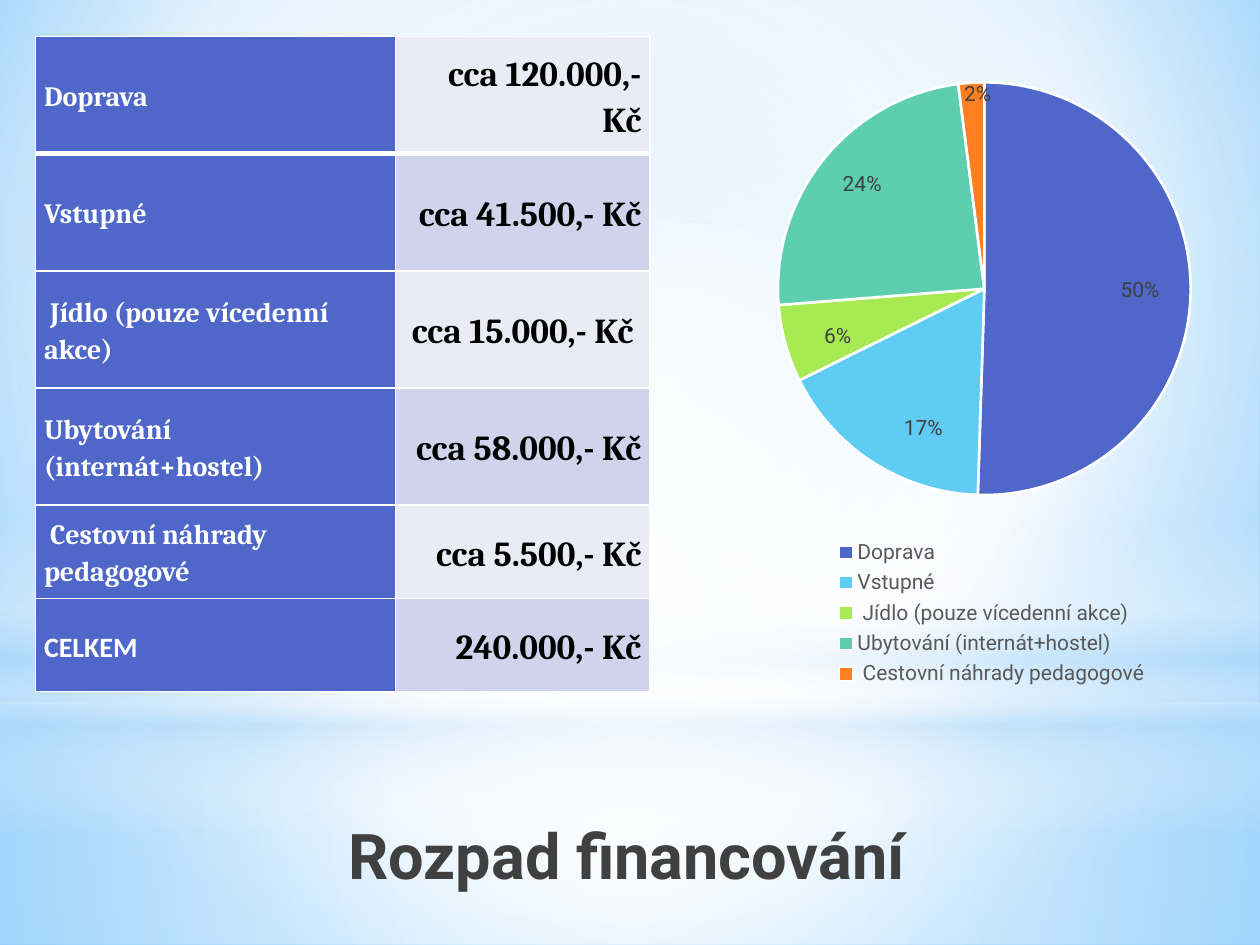
"""Build a slide with a table of trip costs, a pie chart of their shares and a title."""
from lxml import etree
from pptx import Presentation
from pptx.chart.data import CategoryChartData
from pptx.dml.color import RGBColor
from pptx.enum.chart import XL_CHART_TYPE as ChartType, XL_LABEL_POSITION as LabelPosition
from pptx.enum.chart import XL_LEGEND_POSITION as LegendPosition
from pptx.enum.shapes import MSO_SHAPE as Shape
from pptx.enum.text import MSO_ANCHOR as Anchor, PP_ALIGN as Align
from pptx.oxml import parse_xml
from pptx.oxml.ns import nsdecls, qn
from pptx.util import Inches, Pt

WHITE, PALE_BLUE, INDIGO, DARK_GRAY = "FFFFFF", "B4DCFA", "4E67C8", "404040"


def rgb(color):
    return RGBColor.from_string(color)


def write_text(frame, text, font="Cambria", size=16, color=WHITE, align=Align.LEFT, spacing=1.0):
    paragraph = frame.paragraphs[0]
    paragraph.alignment = align
    paragraph.line_spacing = spacing
    run = paragraph.add_run()
    run.text = text
    run.font.name = font
    run.font.size = Pt(size)
    run.font.bold = True
    run.font.color.rgb = rgb(color)


presentation = Presentation()
presentation.slide_width, presentation.slide_height = Inches(10), Inches(7.5)
slide = presentation.slides.add_slide(presentation.slide_layouts[5])

background_stops = [(0, "9ED5FF", 100), (60, WHITE, 100), (100, "5BB9FF", 100)]
floor_stops = [(0, WHITE, 91), (37, WHITE, 76), (100, PALE_BLUE, 79)]
wall_stops = [(0, WHITE, 89), (48, WHITE, 62), (100, PALE_BLUE, 79)]
horizon_stops = [(0, WHITE, 0), (29, WHITE, 30), (45, PALE_BLUE, 40),
                 (55, WHITE, 26), (65, PALE_BLUE, 60), (100, WHITE, 0)]
halo_stops = [(0, WHITE, 100), (56, WHITE, 0)]

radial = '<a:path path="circle"><a:fillToRect l="{}" t="{}" r="{}" b="{}"/></a:path>'
centered = radial.format(50000, 50000, 50000, 50000)
downward = '<a:lin ang="5400000" scaled="0"/>'
gradients = [(slide.background.fill, slide.element, background_stops,
              radial.format(20000, 10000, 20000, 60000))]
for kind, top, height, stops, direction in [
    (Shape.RECTANGLE, 5.58, 1.92, floor_stops, centered),
    (Shape.RECTANGLE, 0, 5.58, wall_stops, centered),
    (Shape.RECTANGLE, 4.12, 2.5, horizon_stops, downward),
    (Shape.OVAL, 1.75, 5.58, halo_stops, centered),
]:
    glow = slide.shapes.add_shape(kind, 0, Inches(top), Inches(10), Inches(height))
    glow.shadow.inherit = False
    glow.line.fill.background()
    gradients.append((glow.fill, glow.element.spPr, stops, direction))

for fill, owner, stops, direction in gradients:
    fill.solid()
    solid_fill = owner.find(".//" + qn("a:solidFill"))
    stop_list = "".join(
        f'<a:gs pos="{position * 1000}"><a:srgbClr val="{color}">'
        f'<a:alpha val="{opacity * 1000}"/></a:srgbClr></a:gs>'
        for position, color, opacity in stops)
    solid_fill.getparent().replace(solid_fill, parse_xml(
        f'<a:gradFill {nsdecls("a")} rotWithShape="1"><a:gsLst>{stop_list}</a:gsLst>{direction}</a:gradFill>'))

costs = [
    ("Doprava", "cca 120.000,- Kč", 0.93),
    ("Vstupné", "cca 41.500,- Kč", 0.93),
    (" Jídlo (pouze vícedenní akce)", "cca 15.000,- Kč ", 0.93),
    ("Ubytování (internát+hostel)", "cca 58.000,- Kč", 0.93),
    (" Cestovní náhrady pedagogové", "cca 5.500,- Kč", 0.74),
    ("CELKEM", "240.000,- Kč", 0.74),
]
table_frame = slide.shapes.add_table(len(costs), 2, Inches(0.28), Inches(0.29), Inches(4.88), Inches(5.2))
table = table_frame.table
table.columns[0].width, table.columns[1].width = Inches(2.86), Inches(2.02)
for row, (item, amount, height) in enumerate(costs):
    table.rows[row].height = Inches(height)
    item_cell, amount_cell = table.cell(row, 0), table.cell(row, 1)
    item_font = "Calibri" if item == "CELKEM" else "Cambria"
    write_text(item_cell.text_frame, item, font=item_font, spacing=1.15)
    write_text(amount_cell.text_frame, amount, size=20, color="000000", align=Align.RIGHT, spacing=1.15)
    for cell, color in ((item_cell, INDIGO), (amount_cell, ("E9EBF5", "D0D3EB")[row % 2])):
        cell.vertical_anchor = Anchor.MIDDLE
        cell.margin_left = cell.margin_right = Inches(0.07)
        cell.margin_top = cell.margin_bottom = 0
        cell.fill.solid()
        cell.fill.fore_color.rgb = rgb(color)

for row, row_element in enumerate(table_frame.element.iter(qn("a:tr"))):
    border_widths = {"L": 1, "R": 1, "T": 3 if row == 1 else 1, "B": 3 if row == 0 else 1}
    for cell_properties in row_element.iter(qn("a:tcPr")):
        for index, (side, width) in enumerate(border_widths.items()):
            cell_properties.insert(index, parse_xml(
                f'<a:ln{side} {nsdecls("a")} w="{Pt(width)}"><a:solidFill>'
                f'<a:srgbClr val="{WHITE}"/></a:solidFill></a:ln{side}>'))

title = slide.shapes.title
title.left, title.top, title.width, title.height = Inches(0.21), Inches(6.43), Inches(9.53), Inches(1.25)
title.text_frame.vertical_anchor = Anchor.TOP
write_text(title.text_frame, "Rozpad financování", font="Roboto", size=36, color=DARK_GRAY, align=Align.CENTER)
title.element.getparent().append(title.element)

slices = [
    (50, INDIGO, {"x": 0.1, "y": 0}),
    (17, "5ECCF3", {"x": -0.01, "y": 0.08}),
    (6, "A7EA52", {"x": -0.09, "y": 0.03}),
    (24, "5DCEAF", {"x": -0.08, "y": -0.06}),
    (2, "FF8021", {"x": 0, "y": -0.14}),
]
shares = CategoryChartData()
shares.categories = [item for item, amount, height in costs[:-1]]
shares.add_series("Series 1", [percent for percent, color, shift in slices])
chart = slide.shapes.add_chart(ChartType.PIE, Inches(5.79), Inches(0.29), Inches(4.17), Inches(5.2), shares).chart
chart.has_title = False
chart.font.name, chart.font.size = "Roboto", Pt(10)
chart.has_legend = True
legend = chart.legend
legend.position = LegendPosition.BOTTOM
legend.include_in_layout = False
legend.font.name, legend.font.size = "Roboto", Pt(12)
legend.font.color.rgb = rgb("595959")

plot = chart.plots[0]
plot.vary_by_categories = True
for index, (percent, color, shift) in enumerate(slices):
    point = plot.series[0].points[index]
    point.format.fill.solid()
    point.format.fill.fore_color.rgb = rgb(color)
    point.format.line.color.rgb = rgb(WHITE)
    point.format.line.width = Pt(1.5)
    label = point.data_label
    label.font.name, label.font.size = "Roboto", Pt(12)
    label.font.color.rgb = rgb(DARK_GRAY)
    label.position = LabelPosition.CENTER

label_elements = chart.element.findall(".//" + qn("c:dLbl"))
for label_element in label_elements:
    label_element.insert(1, etree.Element(qn("c:numFmt"), formatCode='0"%"', sourceLinked="0"))

edges = '<c:xMode val="edge"/><c:yMode val="edge"/>'
inner_edges = '<c:layoutTarget val="inner"/>' + edges
plot_box = {"x": 0.09, "y": 0.07, "w": 0.79, "h": 0.63}
legend_box = {"x": 0.2, "y": 0.76, "w": 0.6, "h": 0.24}
placements = [
    (chart.element.find(".//" + qn("c:plotArea")), 0, inner_edges, plot_box),
    (chart.element.find(".//" + qn("c:legend")), 1, edges, legend_box),
]
for label_element, (percent, color, shift) in zip(label_elements, slices):
    placements.append((label_element, 1, "", shift))
for part, index, modes, box in placements:
    for old_layout in part.findall(qn("c:layout")):
        part.remove(old_layout)
    values = "".join(f'<c:{name} val="{value}"/>' for name, value in box.items())
    part.insert(index, parse_xml(
        f'<c:layout {nsdecls("c")}><c:manualLayout>{modes}{values}</c:manualLayout></c:layout>'))

presentation.save("out.pptx")
